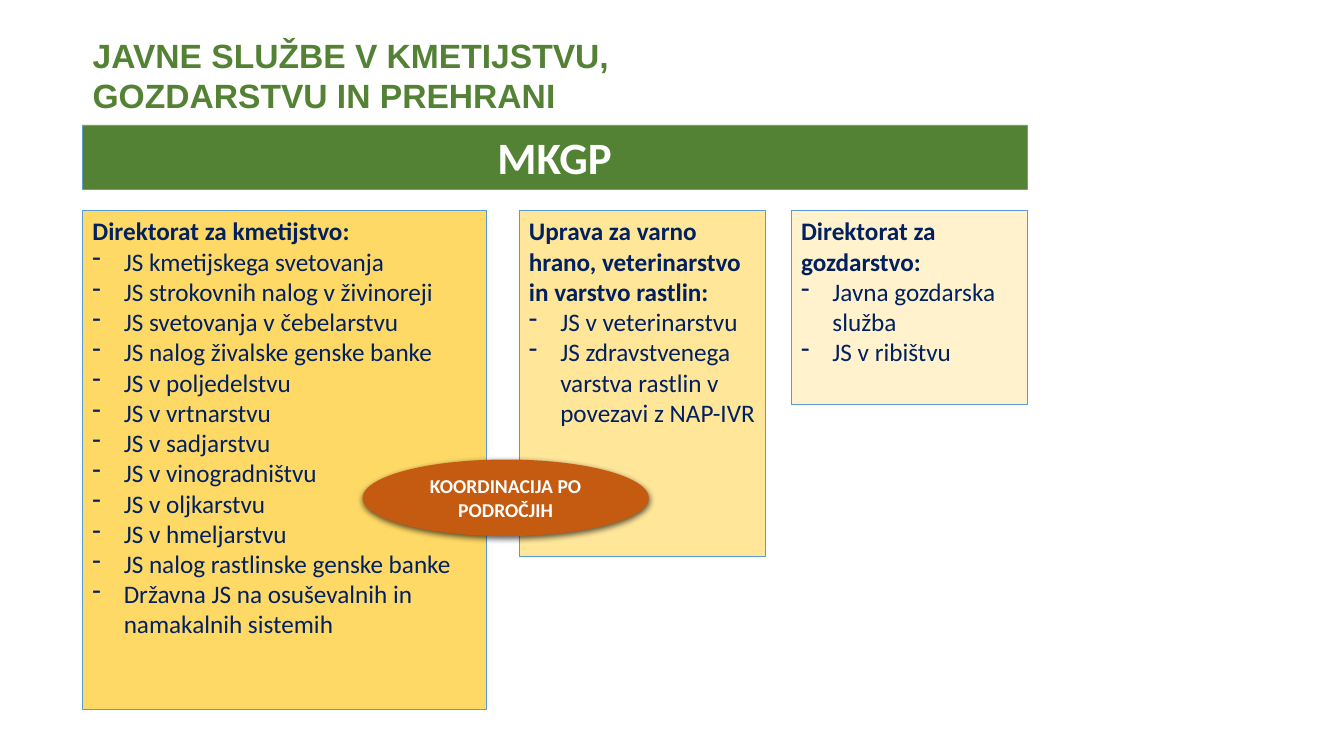
from lxml.etree import SubElement
from pptx import Presentation
from pptx.dml.color import RGBColor
from pptx.enum.shapes import MSO_SHAPE
from pptx.enum.text import MSO_ANCHOR, MSO_AUTO_SIZE, PP_ALIGN
from pptx.oxml.ns import qn
from pptx.util import Cm, Pt

GREEN = RGBColor(0x54, 0x82, 0x35)
BLUE = RGBColor(0x5B, 0x9B, 0xD5)
NAVY = RGBColor(0x00, 0x20, 0x60)
WHITE = RGBColor(0xFF, 0xFF, 0xFF)
ORANGE = RGBColor(0xC5, 0x5A, 0x11)
GOLD = RGBColor(0xFF, 0xD9, 0x66)
SAND = RGBColor(0xFF, 0xE6, 0x99)
CREAM = RGBColor(0xFF, 0xF2, 0xCC)

LEFT = 2.08
WIDTH = 23.8
COLUMNS_TOP = 5.31

# left, width, height, fill, heading, services
DEPARTMENTS = [
    (LEFT, 10.19, 12.57, GOLD, "Direktorat za kmetijstvo:", [
        "JS kmetijskega svetovanja",
        "JS strokovnih nalog v živinoreji",
        "JS svetovanja v čebelarstvu",
        "JS nalog živalske genske banke",
        "JS v poljedelstvu",
        "JS v vrtnarstvu",
        "JS v sadjarstvu",
        "JS v vinogradništvu",
        "JS v oljkarstvu",
        "JS v hmeljarstvu",
        "JS nalog rastlinske genske banke",
        "Državna JS na osuševalnih in namakalnih sistemih",
    ]),
    (13.08, 6.2, 8.71, SAND,
     "Uprava za varno hrano, veterinarstvo in varstvo rastlin:", [
         "JS v veterinarstvu",
         "JS zdravstvenega varstva rastlin v povezavi z NAP-IVR",
     ]),
    (19.94, 5.94, 4.88, CREAM, "Direktorat za gozdarstvo:", [
        "Javna gozdarska služba",
        "JS v ribištvu",
    ]),
]


def format_runs(p, size, color, bold=True, name="Calibri"):
    for r in p.runs:
        r.font.name = name
        r.font.size = Pt(size)
        r.font.bold = bold
        r.font.color.rgb = color


def add_dash(p):
    pPr = p._p.get_or_add_pPr()
    pPr.set("marL", str(Cm(0.79)))
    pPr.set("indent", str(-Cm(0.79)))
    SubElement(pPr, qn("a:buChar"), char="-")


def add_soft_shadow(sp):
    effects = sp._element.spPr.find(qn("a:effectLst"))
    shadow = SubElement(effects, qn("a:outerShdw"), blurRad=str(Pt(4.5)),
                        dist=str(Pt(1.5)), dir="5400000", rotWithShape="0")
    color = SubElement(shadow, qn("a:srgbClr"), val="000000")
    SubElement(color, qn("a:alpha"), val="63000")


def add_filled_shape(slide, kind, left, top, width, height, fill):
    sp = slide.shapes.add_shape(kind, Cm(left), Cm(top), Cm(width), Cm(height))
    sp.shadow.inherit = False
    sp.fill.solid()
    sp.fill.fore_color.rgb = fill
    sp.text_frame.word_wrap = True
    return sp


def add_panel(slide, left, top, width, height, fill):
    """Add a thinly outlined rectangle with its text at the top."""
    sp = add_filled_shape(slide, MSO_SHAPE.RECTANGLE, left, top, width, height, fill)
    sp.line.color.rgb = BLUE
    sp.line.width = Pt(0.5)
    sp.text_frame.vertical_anchor = MSO_ANCHOR.TOP
    return sp


def place_title(slide, left, top, width, height):
    title = slide.shapes.title
    title.left, title.top = Cm(left), Cm(top)
    title.width, title.height = Cm(width), Cm(height)
    tf = title.text_frame
    tf.text = "JAVNE SLUŽBE V KMETIJSTVU,\nGOZDARSTVU IN PREHRANI"
    tf.auto_size = MSO_AUTO_SIZE.NONE
    tf.word_wrap = False
    tf.vertical_anchor = MSO_ANCHOR.TOP
    for p in tf.paragraphs:
        p.alignment = PP_ALIGN.LEFT
        format_runs(p, 24, GREEN, name="Arial")


def add_ministry_bar(slide, left, top, width, height):
    sp = add_panel(slide, left, top, width, height, GREEN)
    p = sp.text_frame.paragraphs[0]
    p.text = "MKGP"
    p.alignment = PP_ALIGN.CENTER
    format_runs(p, 32, WHITE)


def add_department(slide, left, top, width, height, fill, heading, services):
    tf = add_panel(slide, left, top, width, height, fill).text_frame
    tf.text = "\n".join([heading, *services])
    for i, p in enumerate(tf.paragraphs):
        p.alignment = PP_ALIGN.LEFT
        if i > 0:
            add_dash(p)
        format_runs(p, 18, NAVY, bold=i == 0)


def add_coordination(slide, left, top, width, height):
    sp = add_filled_shape(slide, MSO_SHAPE.OVAL, left, top, width, height, ORANGE)
    sp.line.fill.background()
    add_soft_shadow(sp)
    sp.text_frame.vertical_anchor = MSO_ANCHOR.MIDDLE
    p = sp.text_frame.paragraphs[0]
    p.text = "KOORDINACIJA PO PODROČJIH"
    p.alignment = PP_ALIGN.CENTER
    format_runs(p, 14, WHITE)


def main():
    prs = Presentation()
    prs.slide_width, prs.slide_height = Cm(33.87), Cm(19.05)
    slide = prs.slides.add_slide(prs.slide_layouts[5])
    place_title(slide, LEFT, 0.74, 13.89, 2.31)
    add_ministry_bar(slide, LEFT, 3.15, WIDTH, 1.63)
    for left, width, height, fill, heading, services in DEPARTMENTS:
        add_department(slide, left, COLUMNS_TOP, width, height, fill, heading, services)
    add_coordination(slide, 9.14, 11.58, 7.21, 1.93)
    prs.save("out.pptx")


if __name__ == "__main__":
    main()
